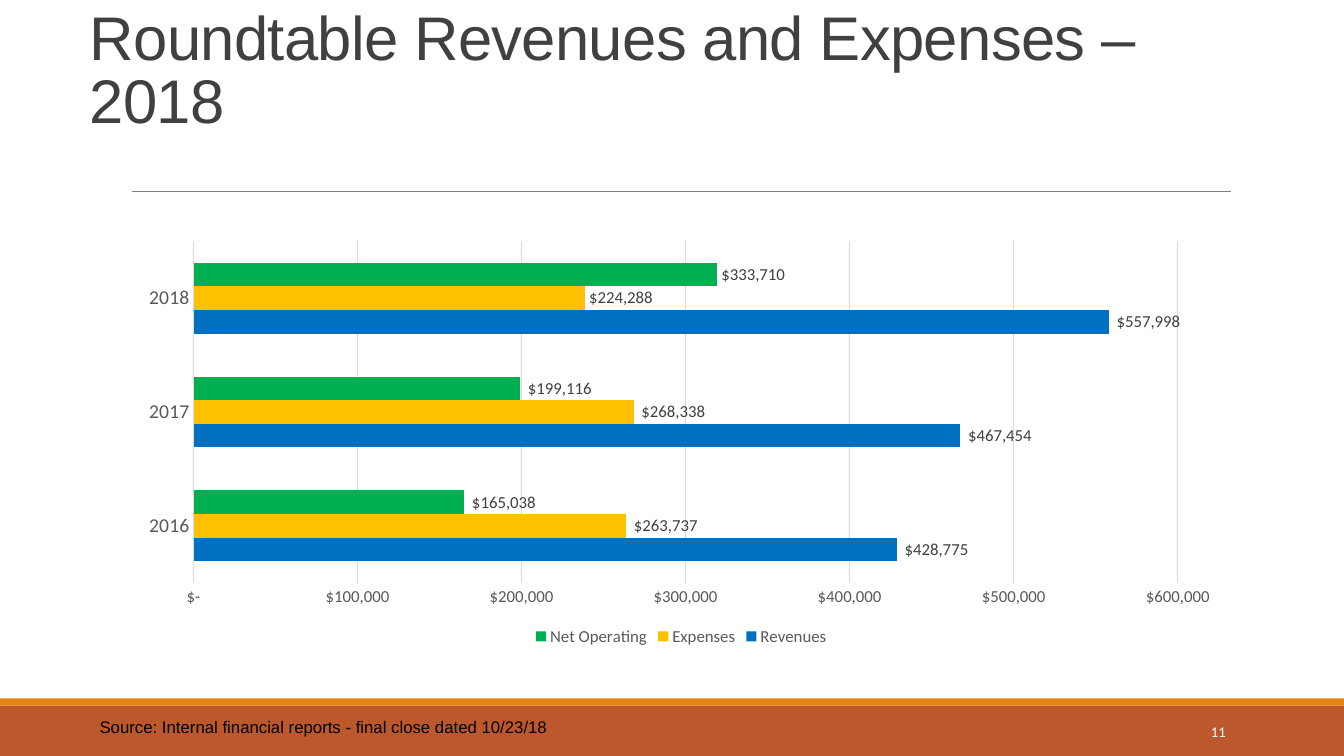
"""Build the roundtable revenues and expenses slide."""
from dataclasses import dataclass

from lxml.etree import SubElement
from pptx import Presentation
from pptx.chart.data import CategoryChartData
from pptx.dml.color import RGBColor
from pptx.enum.chart import XL_CHART_TYPE as ChartType
from pptx.enum.chart import XL_LABEL_POSITION as LabelPos
from pptx.enum.chart import XL_LEGEND_POSITION as LegendPos
from pptx.enum.chart import XL_TICK_MARK as Tick
from pptx.enum.shapes import MSO_CONNECTOR as Connector
from pptx.enum.shapes import MSO_SHAPE as Shape
from pptx.enum.text import MSO_ANCHOR as Anchor
from pptx.enum.text import MSO_AUTO_SIZE as AutoSize
from pptx.enum.text import PP_ALIGN as Align
from pptx.oxml.ns import qn
from pptx.util import Cm, Pt

COLORS = {
    "rust": "BD582C", "orange": "E48312", "rule": "808080", "title": "404040",
    "axis": "595959", "grid": "D9D9D9", "black": "000000", "white": "FFFFFF",
    "blue": "0070C0", "yellow": "FFC000", "green": "00B050",
}
YEARS = ("2016", "2017", "2018")
DOLLARS = r'_("$"* #,##0_);_("$"* \(#,##0\);_("$"* "-"_);_(@_)'


@dataclass(frozen=True)
class Band:
    """A full-width footer stripe."""
    top: float
    height: float
    color: str


@dataclass(frozen=True)
class Note:
    """A line of footer text."""
    text: str
    box: tuple[float, float, float, float]
    font: str
    size: float
    color: str
    align: Align
    anchor: Anchor


@dataclass(frozen=True)
class Measure:
    """A chart series with an optional label text for the last year."""
    name: str
    values: tuple[int, ...]
    color: str
    last_label: str = ""


BANDS = (Band(17.78, 1.27, "rust"), Band(17.6, 0.18, "orange"))
NOTES = (
    Note("11", (27.51, 17.93, 3.63, 1.02), "Calibri", 10.5, "white",
         Align.RIGHT, Anchor.MIDDLE),
    Note("Source: Internal financial reports - final close dated 10/23/18",
         (2.26, 17.93, 12.5, 0.77), "Arial", 12, "black", Align.LEFT, Anchor.TOP),
)
MEASURES = (
    Measure("Revenues", (428775, 467454, 557998), "blue"),
    Measure("Expenses", (263737, 268338, 238665), "yellow", "$224,288"),
    Measure("Net Operating", (165038, 199116, 319334), "green", "$333,710"),
)


def rgb(name: str) -> RGBColor:
    """Look up a named colour."""
    return RGBColor.from_string(COLORS[name])


def style_font(font, name: str, size: float, color: str) -> None:
    """Set the face, size and colour of a font."""
    font.name, font.size = name, Pt(size)
    font.color.rgb = rgb(color)


def style_line(line, color: str, width: float) -> None:
    """Set the colour and width of a line."""
    line.color.rgb, line.width = rgb(color), Pt(width)


def add_band(s, band: Band, width: int) -> None:
    """Draw a footer stripe."""
    sp = s.shapes.add_shape(Shape.RECTANGLE, 0, Cm(band.top), width, Cm(band.height))
    sp.shadow.inherit = False
    sp.fill.solid()
    sp.fill.fore_color.rgb = rgb(band.color)
    sp.line.fill.background()


def add_rule(s) -> None:
    """Draw the line below the title."""
    line = s.shapes.add_connector(Connector.STRAIGHT, Cm(3.33), Cm(4.83), Cm(31.01), Cm(4.83))
    style_line(line.line, "rule", 0.5)
    SubElement(line._element.spPr, qn("a:effectLst"))


def add_title(s, text: str) -> None:
    """Fill and place the title placeholder."""
    sp = s.shapes.title
    sp.left, sp.top, sp.width, sp.height = Cm(2.01), Cm(0.79), Cm(30.38), Cm(2.77)
    tf = sp.text_frame
    tf.text = text
    tf.word_wrap, tf.auto_size = True, AutoSize.NONE
    tf.vertical_anchor = Anchor.BOTTOM
    p = tf.paragraphs[0]
    p.alignment, p.line_spacing = Align.LEFT, 0.85
    r = p.runs[0]
    style_font(r.font, "Arial", 44, "title")
    r.font._element.set("spc", "-50")


def add_note(s, note: Note) -> None:
    """Write a footer text."""
    tf = s.shapes.add_textbox(*map(Cm, note.box)).text_frame
    tf.text = note.text
    tf.word_wrap, tf.vertical_anchor = True, note.anchor
    p = tf.paragraphs[0]
    p.alignment = note.align
    style_font(p.runs[0].font, note.font, note.size, note.color)


def style_series(series, measure: Measure) -> None:
    """Colour the bars and label them."""
    series.format.fill.solid()
    series.format.fill.fore_color.rgb = rgb(measure.color)
    series.invert_if_negative = False
    labels = series.data_labels
    labels.show_value, labels.position = True, LabelPos.OUTSIDE_END
    labels.number_format, labels.number_format_is_linked = DOLLARS, False
    style_font(labels.font, "Calibri", 12, "title")
    if measure.last_label:
        label = series.points[len(YEARS) - 1].data_label
        label.text_frame.text = measure.last_label
        style_font(label.text_frame.paragraphs[0].runs[0].font, "Calibri", 12, "title")
        label.position = LabelPos.OUTSIDE_END


def add_bars(s) -> None:
    """Add the clustered bar chart."""
    data = CategoryChartData(number_format=DOLLARS)
    data.categories = YEARS
    for measure in MEASURES:
        data.add_series(measure.name, measure.values)
    chart = s.shapes.add_chart(ChartType.BAR_CLUSTERED, Cm(3.2), Cm(5.87),
                               Cm(27.94), Cm(10.52), data).chart
    style_font(chart.font, "Calibri", 10, "black")
    chart.has_title = False
    chart.has_legend = True
    chart.legend.position, chart.legend.include_in_layout = LegendPos.BOTTOM, False
    style_font(chart.legend.font, "Calibri", 12, "axis")

    years, amounts = chart.category_axis, chart.value_axis
    for axis, size in ((years, 14), (amounts, 12)):
        axis.major_tick_mark = axis.minor_tick_mark = Tick.NONE
        style_font(axis.tick_labels.font, "Calibri", size, "axis")
    style_line(years.format.line, "grid", 0.75)
    amounts.format.line.fill.background()
    amounts.minimum_scale, amounts.maximum_scale, amounts.major_unit = 0, 600000, 100000
    amounts.has_major_gridlines = True
    style_line(amounts.major_gridlines.format.line, "grid", 0.75)
    amounts.tick_labels.number_format = DOLLARS
    amounts.tick_labels.number_format_is_linked = False

    plot = chart.plots[0]
    plot.gap_width, plot.overlap, plot.vary_by_categories = 182, 0, False
    for series, measure in zip(plot.series, MEASURES):
        style_series(series, measure)


def main() -> None:
    """Assemble and save the slide."""
    prs = Presentation()
    prs.slide_width, prs.slide_height = Cm(33.87), Cm(19.05)
    s = prs.slides.add_slide(prs.slide_layouts[5])
    for band in BANDS:
        add_band(s, band, prs.slide_width)
    add_rule(s)
    add_title(s, "Roundtable Revenues and Expenses – 2018")
    add_bars(s)
    for note in NOTES:
        add_note(s, note)
    prs.save("out.pptx")


if __name__ == "__main__":
    main()
